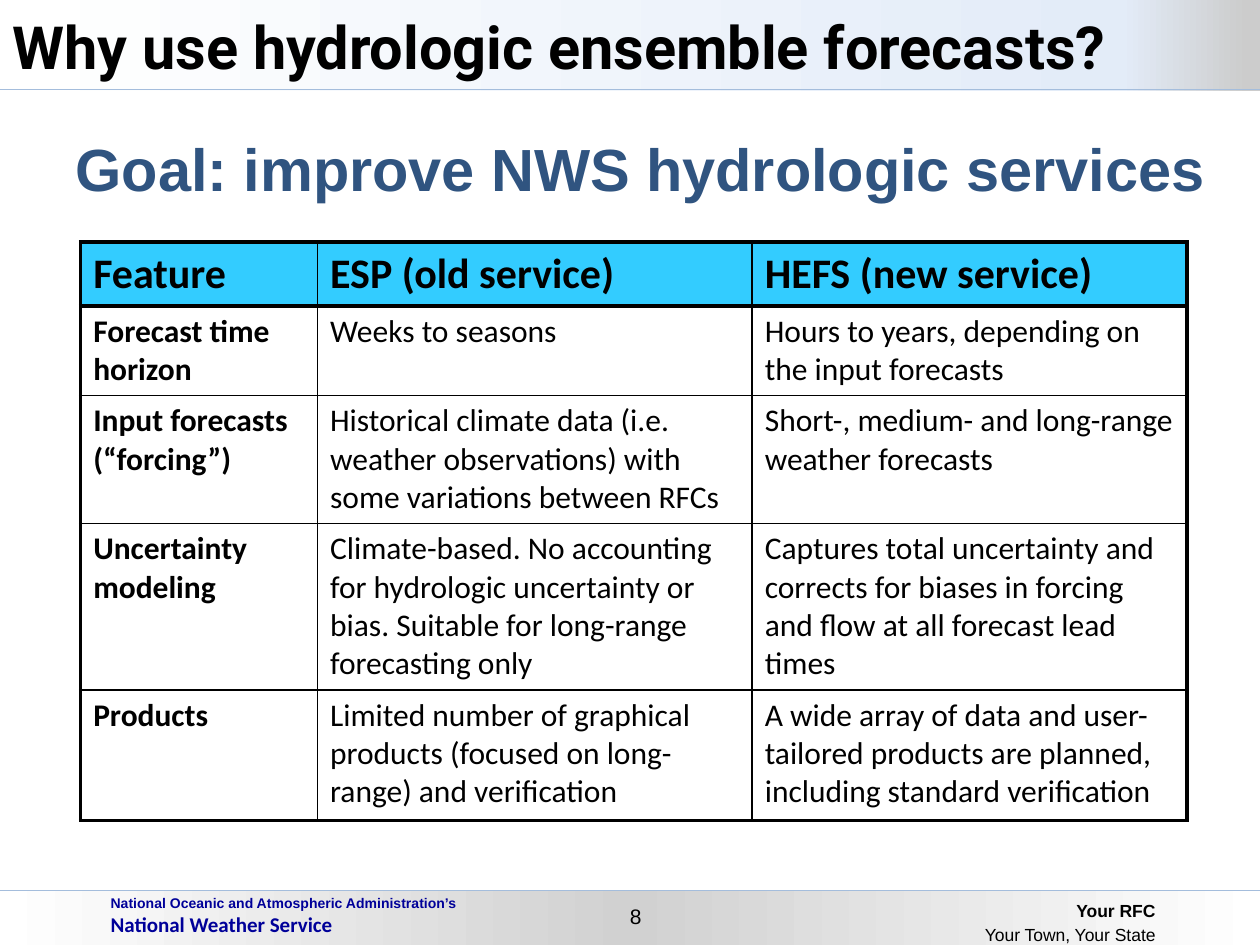
from lxml import etree
from pptx import Presentation
from pptx import util as u
from pptx.dml.color import RGBColor
from pptx.enum import shapes, text
from pptx.oxml import parse_xml
from pptx.oxml.ns import nsdecls, qn

BLACK = RGBColor(0x00, 0x00, 0x00)
WHITE = RGBColor(0xFF, 0xFF, 0xFF)
GRAY = RGBColor(0xD1, 0xD1, 0xD1)
SILVER = RGBColor(0xCC, 0xCC, 0xCC)
PALE_BLUE = RGBColor(0xE3, 0xEC, 0xF8)
RULE_BLUE = RGBColor(0xA4, 0xBD, 0xDC)
NAVY = RGBColor(0x00, 0x00, 0x99)
GOAL_BLUE = RGBColor(0x30, 0x54, 0x80)
HEADER_CYAN = RGBColor(0x33, 0xCC, 0xFF)

LEFT, CENTER, RIGHT = text.PP_ALIGN.LEFT, text.PP_ALIGN.CENTER, text.PP_ALIGN.RIGHT
TOP, MIDDLE = text.MSO_ANCHOR.TOP, text.MSO_ANCHOR.MIDDLE

COMPARISON = [
    ["Feature", "ESP (old service)", "HEFS (new service)"],
    ["Forecast time horizon", "Weeks to seasons",
     "Hours to years, depending on the input forecasts"],
    ["Input forecasts (“forcing”)",
     "Historical climate data (i.e. weather observations) with some variations between RFCs",
     "Short-, medium- and long-range weather forecasts"],
    ["Uncertainty modeling",
     "Climate-based. No accounting for hydrologic uncertainty or bias. "
     "Suitable for long-range forecasting only",
     "Captures total uncertainty and corrects for biases in forcing and flow "
     "at all forecast lead times"],
    ["Products",
     "Limited number of graphical products (focused on long-range) and verification",
     "A wide array of data and user-tailored products are planned, "
     "including standard verification"],
]
COLUMN_WIDTHS = [1.88, 3.45, 3.45]
ROW_HEIGHTS = [0.49, 0.71, 1, 1.3, 1.04]


def apply(target, values):
    for attribute, value in values.items():
        setattr(target, attribute, value)


def style_font(font, size, name, color, bold=False):
    apply(font, {"size": u.Pt(size), "name": name, "bold": bold})
    font.color.rgb = color


def place(part, box):
    apply(part, dict(zip(("left", "top", "width", "height"), map(u.Inches, box))))


def add_band(slide, box, stops):
    band = slide.shapes.add_shape(shapes.MSO_SHAPE.RECTANGLE, *map(u.Inches, box))
    band.shadow.inherit = False
    band.line.fill.background()
    stop_xml = "".join(
        f'<a:gs pos="{percent * 1000}"><a:srgbClr val="{color}"/></a:gs>'
        for percent, color in stops)
    gradient = parse_xml(f'<a:gradFill {nsdecls("a")} rotWithShape="1">'
                         f'<a:gsLst>{stop_xml}</a:gsLst><a:lin ang="0" scaled="0"/></a:gradFill>')
    band.element.spPr.find(qn("a:prstGeom")).addnext(gradient)


def add_rule(slide, left, top, width):
    rule = slide.shapes.add_connector(
        shapes.MSO_CONNECTOR.STRAIGHT, u.Inches(left + width), u.Inches(top),
        u.Inches(left), u.Inches(top))
    rule.line.color.rgb = RULE_BLUE
    rule.line.width = u.Pt(0.75)
    etree.SubElement(rule.element.spPr, qn("a:effectLst"))


def add_lines(slide, box, lines, alignment=LEFT, wrap=True, spacing=None):
    frame = slide.shapes.add_textbox(*map(u.Inches, box)).text_frame
    frame.word_wrap = wrap
    frame.text = "\n".join(words for words, _ in lines)
    for paragraph, (_, font_values) in zip(frame.paragraphs, lines):
        apply(paragraph, {"alignment": alignment, "line_spacing": spacing})
        style_font(paragraph.font, *font_values)
    return frame


def fill_placeholder(placeholder, box, words, font_values, anchor):
    place(placeholder, box)
    frame = placeholder.text_frame
    frame.text = words
    apply(frame, {"word_wrap": True, "vertical_anchor": anchor,
                  "auto_size": text.MSO_AUTO_SIZE.NONE})
    paragraph = frame.paragraphs[0]
    paragraph.alignment = LEFT
    paragraph.space_before = u.Pt(0)
    style_font(paragraph.font, *font_values)
    return paragraph


def build_header(slide, left, top, width, height):
    box = (left, top, width, height)
    add_band(slide, box, [(0, WHITE), (89, PALE_BLUE), (99, SILVER)])
    add_rule(slide, left, top + height - 0.01, width)
    headline = slide.shapes.title
    fill_placeholder(headline, box, "Why use hydrologic ensemble forecasts?",
                     (34, "Roboto", BLACK, True), MIDDLE)
    slide.shapes.element.append(headline.element)


def build_goal(slide, left, top, width, height):
    goal = slide.placeholders[1]
    goal.fill.solid()
    goal.fill.fore_color.rgb = WHITE
    paragraph = fill_placeholder(
        goal, (left, top, width, height), "Goal: improve NWS hydrologic services",
        (34, "Arial", GOAL_BLUE, True), TOP)
    properties = paragraph._p.get_or_add_pPr()
    properties.set("marL", str(u.Inches(0.67)))
    properties.set("indent", str(u.Inches(-0.67)))
    properties.insert_element_before(
        parse_xml(f'<a:buNone {nsdecls("a")}/>'), "a:tabLst", "a:defRPr", "a:extLst")


def set_borders(cell, widths):
    properties = cell._tc.get_or_add_tcPr()
    for position, (side, points) in enumerate(widths.items()):
        properties.insert(position, parse_xml(
            f'<a:ln{side} {nsdecls("a")} w="{u.Pt(points)}"><a:solidFill>'
            f'<a:srgbClr val="{BLACK}"/></a:solidFill></a:ln{side}>'))


def build_comparison(slide, left, top, width, height):
    last_row, last_column = len(ROW_HEIGHTS) - 1, len(COLUMN_WIDTHS) - 1
    table = slide.shapes.add_table(
        last_row + 1, last_column + 1, *map(u.Inches, (left, top, width, height))).table
    apply(table, {"first_row": False, "horz_banding": False})
    for column, column_width in zip(table.columns, COLUMN_WIDTHS):
        column.width = u.Inches(column_width)
    for r, (row, row_height) in enumerate(zip(table.rows, ROW_HEIGHTS)):
        row.height = u.Inches(row_height)
        heading = r == 0
        for c, cell in enumerate(row.cells):
            cell.text = COMPARISON[r][c]
            cell.vertical_anchor = MIDDLE if heading else TOP
            style_font(cell.text_frame.paragraphs[0].font, 24 if heading else 18,
                       "Calibri", BLACK, heading or c == 0)
            if heading:
                cell.fill.solid()
                cell.fill.fore_color.rgb = HEADER_CYAN
            else:
                cell.fill.background()
            set_borders(cell, {
                "L": 2.25 if c == 0 else 1,
                "R": 2.25 if c == last_column else 1,
                "T": {0: 2.25, 1: 3}.get(r, 1),
                "B": {0: 3, last_row: 2.25}.get(r, 1),
            })


def build_footer(slide, left, top, width, height):
    add_rule(slide, left, top, width)
    add_band(slide, (left, top, width, height), [(0, WHITE), (50, GRAY), (100, WHITE)])
    add_lines(slide, (left + 0.78, top - 0.02, 3.33, 0.43), [
        ("National Oceanic and Atmospheric Administration’s", (8, "Arial", NAVY, True)),
        ("National Weather Service", (12, "Calibri", NAVY, True))])
    add_lines(slide, (left + 4.84, top + 0.05, 0.41, 0.3),
              [("8", (12, "Arial", BLACK))], CENTER, False)
    office = add_lines(slide, (left + 6.89, top, 2.33, height), [
        ("Your RFC", (10, "Arial", BLACK, True)),
        ("Your Town, Your State", (10, "Arial", BLACK))], RIGHT, spacing=1.15)
    apply(office, {"margin_left": u.Inches(0.01), "margin_right": u.Inches(0.05)})


def main():
    deck = Presentation()
    apply(deck, {"slide_width": u.Inches(10), "slide_height": u.Inches(7.5)})
    slide = deck.slides.add_slide(deck.slide_layouts[1])
    build_footer(slide, 0, 7.07, 10, 0.44)
    build_header(slide, 0, 0, 10, 0.72)
    build_goal(slide, 0.5, 1, 9.36, 5.67)
    build_comparison(slide, 0.64, 1.92, 8.78, 4.54)
    deck.save("out.pptx")


if __name__ == "__main__":
    main()
